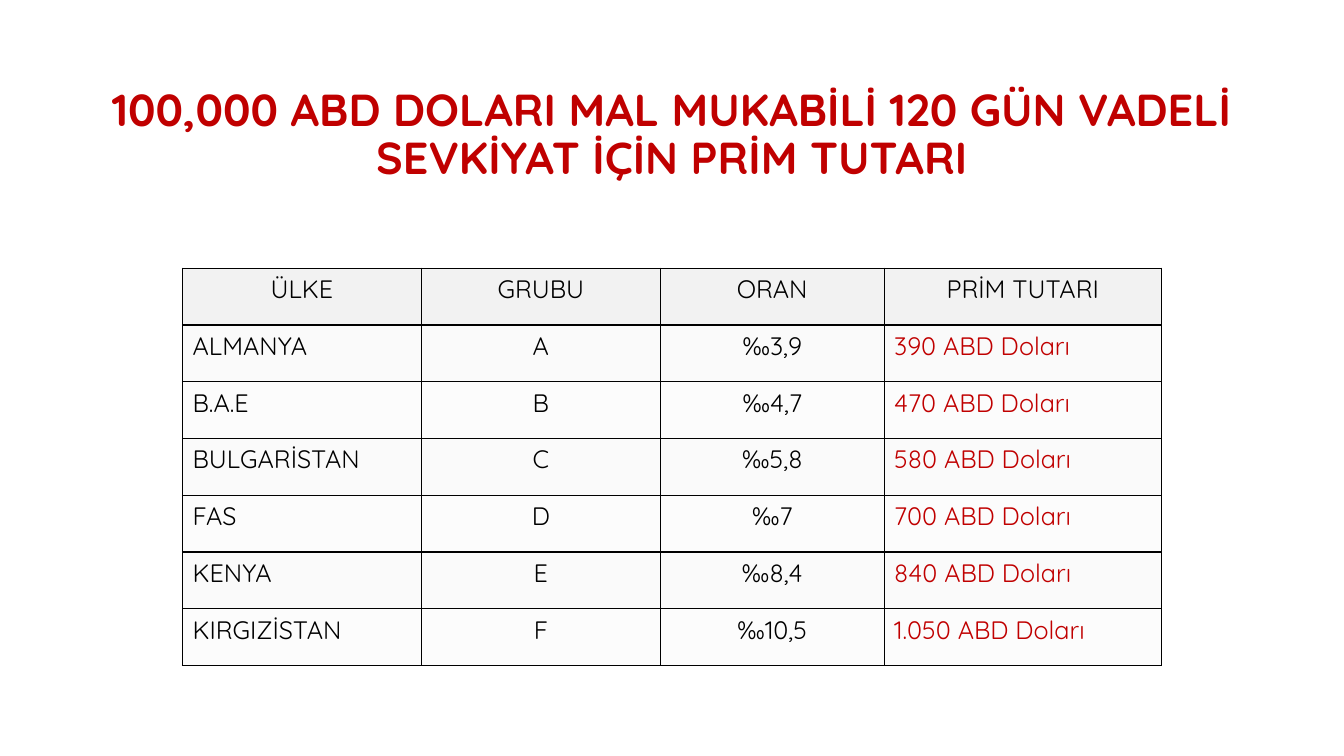
from dataclasses import dataclass

from lxml import etree
from pptx import Presentation
from pptx.dml.color import RGBColor
from pptx.enum import text
from pptx.oxml import ns
from pptx.util import Cm, Length, Pt


@dataclass(frozen=True)
class Theme:
    font: str = "Quicksand"
    ink: str = "000000"
    accent: str = "C00000"
    header_fill: str = "F2F2F2"
    row_fills: tuple[str, str] = ("FAFAFA", "FCFCFC")
    title_size: Length = Pt(32)
    table_size: Length = Pt(18)
    border: Length = Pt(1)


@dataclass(frozen=True)
class Column:
    heading: str
    width: Length
    align: text.PP_ALIGN
    color: str


@dataclass(frozen=True)
class Premium:
    country: str
    group: str
    rate: str
    amount: str

    def values(self) -> tuple[str, ...]:
        return self.country, self.group, self.rate, f"{self.amount} ABD Doları"


THEME = Theme()
LEFT, CENTER = text.PP_ALIGN.LEFT, text.PP_ALIGN.CENTER
TITLE = "100,000 ABD DOLARI MAL MUKABİLİ 120 GÜN VADELİ SEVKİYAT İÇİN PRİM TUTARI"
COLUMNS = (
    Column("ÜLKE", Cm(6.02), LEFT, THEME.ink),
    Column("GRUBU", Cm(6.02), CENTER, THEME.ink),
    Column("ORAN", Cm(5.64), CENTER, THEME.ink),
    Column("PRİM TUTARI", Cm(6.99), LEFT, THEME.accent),
)
PREMIUMS = (
    Premium("ALMANYA", "A", "‰3,9", "390"),
    Premium("B.A.E", "B", "‰4,7", "470"),
    Premium("BULGARİSTAN", "C", "‰5,8", "580"),
    Premium("FAS", "D", "‰7", "700"),
    Premium("KENYA", "E", "‰8,4", "840"),
    Premium("KIRGIZİSTAN", "F", "‰10,5", "1.050"),
)
ROW_HEIGHT = Cm(1.43)


def write(paragraph, words: str, size: Length, color: str, align: text.PP_ALIGN, bold: bool = False) -> None:
    paragraph.alignment = align
    run = paragraph.add_run()
    run.text = words
    run.font.name = THEME.font
    run.font.size = size
    run.font.bold = bold
    run.font.color.rgb = RGBColor.from_string(color)


def add_borders(cell) -> None:
    """Line all four sides; borders must precede the fill in the cell properties."""
    properties = cell._tc.get_or_add_tcPr()
    for position, side in enumerate(("lnL", "lnR", "lnT", "lnB")):
        line = etree.Element(ns.qn(f"a:{side}"), w=str(THEME.border))
        fill = etree.SubElement(line, ns.qn("a:solidFill"))
        etree.SubElement(fill, ns.qn("a:srgbClr"), val=THEME.ink)
        properties.insert(position, line)


def fill_cell(cell, words: str, fill: str, color: str, align: text.PP_ALIGN) -> None:
    cell.fill.solid()
    cell.fill.fore_color.rgb = RGBColor.from_string(fill)
    add_borders(cell)
    write(cell.text_frame.paragraphs[0], words, THEME.table_size, color, align)


def add_title(slide) -> None:
    title = slide.shapes.title
    title.left, title.top, title.width, title.height = Cm(2.33), Cm(1.58), Cm(29.21), Cm(3.68)
    frame = title.text_frame
    frame.word_wrap = True
    frame.auto_size = text.MSO_AUTO_SIZE.NONE
    frame.vertical_anchor = text.MSO_ANCHOR.MIDDLE
    heading = frame.paragraphs[0]
    heading.line_spacing = 0.9
    write(heading, TITLE, THEME.title_size, THEME.accent, CENTER, bold=True)


def add_premium_table(slide) -> None:
    row_count = len(PREMIUMS) + 1
    width = sum(column.width for column in COLUMNS)
    table = slide.shapes.add_table(
        row_count, len(COLUMNS), Cm(4.6), Cm(6.76), width, ROW_HEIGHT * row_count
    ).table
    for row in table.rows:
        row.height = ROW_HEIGHT
    for c, column in enumerate(COLUMNS):
        table.columns[c].width = column.width
        fill_cell(table.cell(0, c), column.heading, THEME.header_fill, THEME.ink, CENTER)
        for r, premium in enumerate(PREMIUMS):
            fill = THEME.row_fills[r % 2]
            fill_cell(table.cell(r + 1, c), premium.values()[c], fill, column.color, column.align)


def main() -> None:
    deck = Presentation()
    deck.slide_width, deck.slide_height = Cm(33.87), Cm(19.05)
    slide = deck.slides.add_slide(deck.slide_layouts.get_by_name("Title Only"))
    add_title(slide)
    add_premium_table(slide)
    deck.save("out.pptx")


if __name__ == "__main__":
    main()
